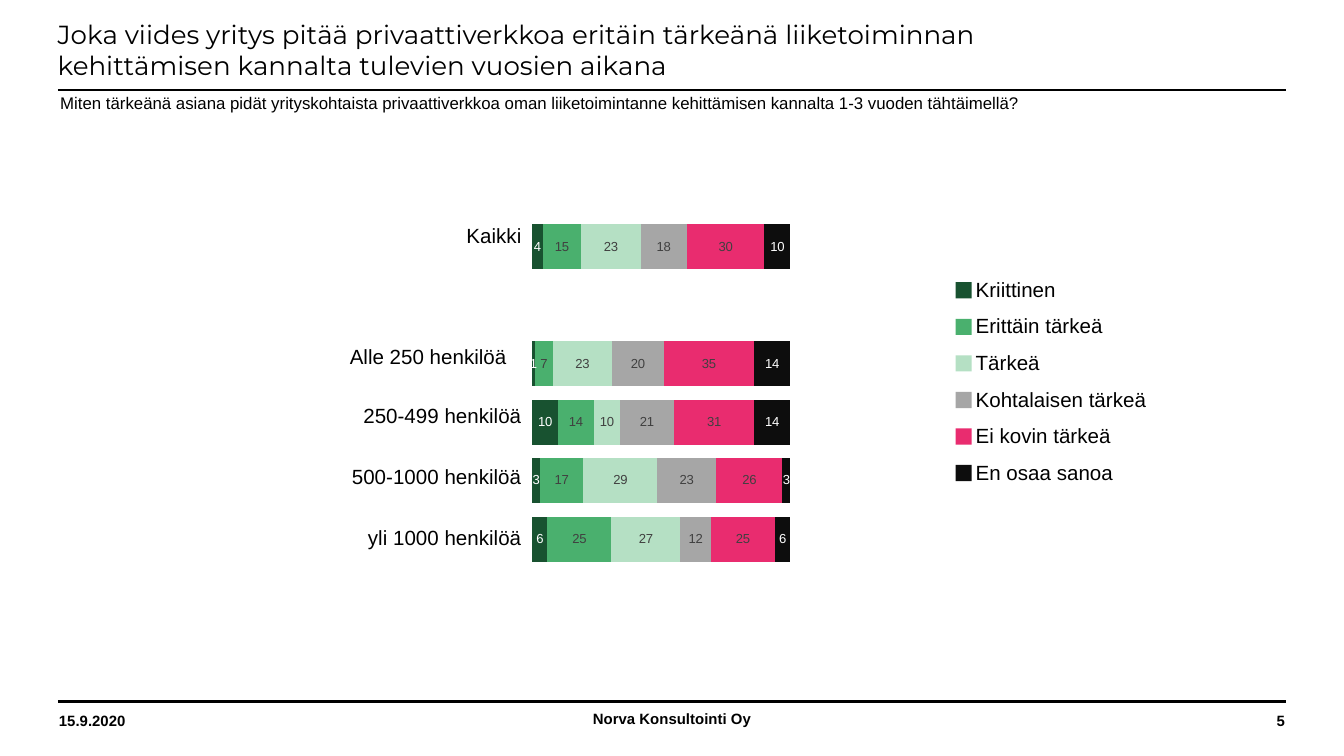
import pptx
import pptx.chart.data
import pptx.dml.color
import pptx.enum.chart
import pptx.enum.shapes
import pptx.enum.text
import pptx.oxml
import pptx.util
from pptx.util import Inches

# Content
TITLE = ("Joka viides yritys pitää privaattiverkkoa eritäin tärkeänä liiketoiminnan "
         "kehittämisen kannalta tulevien vuosien aikana")
QUESTION = ("Miten tärkeänä asiana pidät yrityskohtaista privaattiverkkoa oman "
            "liiketoimintanne kehittämisen kannalta 1-3 vuoden tähtäimellä?")
FOOTER = [  # text, left, top, width, alignment
    ("15.9.2020", 0.34, 5.21, 0.93, "LEFT"),
    ("Norva Konsultointi Oy", 3.31, 5.2, 3.38, "CENTER"),
    ("5", 9.03, 5.21, 0.63, "RIGHT"),
]
GROUPS = [  # name, label top, label right edge; the nameless group is a gap
    ("Kaikki", 1.66, 3.88),
    ("", None, None),
    ("Alle 250 henkilöä", 2.56, 3.77),
    ("250-499 henkilöä", 3.0, 3.88),
    ("500-1000 henkilöä", 3.45, 3.88),
    ("yli 1000 henkilöä", 3.91, 3.88),
]
ANSWERS = [  # name, fill, label colour, share per group
    ("Kriittinen", "dark green", "white", (4, None, 1, 10, 3, 6)),
    ("Erittäin tärkeä", "green", "grey text", (15, None, 7, 14, 17, 25)),
    ("Tärkeä", "light green", "grey text", (23, None, 23, 10, 29, 27)),
    ("Kohtalaisen tärkeä", "grey", "grey text", (18, None, 20, 21, 23, 12)),
    ("Ei kovin tärkeä", "pink", "grey text", (30, None, 35, 31, 26, 25)),
    ("En osaa sanoa", "near black", "white", (10, None, 14, 14, 3, 6)),
]
COLORS = {
    "black": "000000", "white": "FFFFFF", "grey text": "404040",
    "dark green": "185230", "green": "4AB06E", "light green": "B5E0C4",
    "grey": "A6A6A6", "pink": "E92C6F", "near black": "0D0D0D",
}

# Layout in inches
SLIDE_WIDTH = 10
SLIDE_HEIGHT = SLIDE_WIDTH * 9 / 16
RULE_LEFT, RULE_RIGHT, RULE_TOPS = 0.43, 9.57, (0.67, 5.22)
PLOT_LEFT, PLOT_TOP, PLOT_WIDTH, PLOT_HEIGHT = 3.96, 1.62, 1.92, 2.61
CHART_MARGIN = 0.1
LABEL_WIDTH, LABEL_HEIGHT = 1.3, 0.19
LEGEND_LEFT, LEGEND_TOP, LEGEND_BOTTOM = 7.11, 2.1, 3.46
LEGEND_PITCH = (LEGEND_BOTTOM - LEGEND_TOP) / (len(ANSWERS) - 1)
SWATCH = 0.12


def color(name):
    return pptx.dml.color.RGBColor.from_string(COLORS[name])


def add_text(slide, text, left, top, width, height, size=11, font="Arial", bold=False,
             align="LEFT", anchor="TOP", wrap=True, inset=True):
    box = slide.shapes.add_textbox(Inches(left), Inches(top), Inches(width), Inches(height))
    frame = box.text_frame
    frame.word_wrap = wrap
    frame.vertical_anchor = getattr(pptx.enum.text.MSO_ANCHOR, anchor)
    if not inset:
        frame.margin_left = frame.margin_right = frame.margin_top = frame.margin_bottom = 0
    paragraph = frame.paragraphs[0]
    paragraph.alignment = getattr(pptx.enum.text.PP_ALIGN, align)
    run = paragraph.add_run()
    run.text = text
    run.font.name, run.font.size, run.font.bold = font, pptx.util.Pt(size), bold
    run.font.color.rgb = color("black")


def add_rule(slide, top):
    rule = slide.shapes.add_connector(
        pptx.enum.shapes.MSO_CONNECTOR.STRAIGHT,
        Inches(RULE_LEFT), Inches(top), Inches(RULE_RIGHT), Inches(top))
    rule.line.color.rgb = color("black")
    rule.line.width = pptx.util.Pt(1.25)
    properties = rule._element.spPr
    properties.append(properties.makeelement(pptx.oxml.ns.qn("a:effectLst"), {}))


def place_plot(chart, width, height):
    """Fix the inner plot area inside the chart frame."""
    x, y = CHART_MARGIN / width, CHART_MARGIN / height
    layout = pptx.oxml.parse_xml(
        f'<c:layout {pptx.oxml.ns.nsdecls("c")}><c:manualLayout>'
        '<c:layoutTarget val="inner"/><c:xMode val="edge"/><c:yMode val="edge"/>'
        f'<c:x val="{x:.4f}"/><c:y val="{y:.4f}"/>'
        f'<c:w val="{1 - 2 * x:.4f}"/><c:h val="{1 - 2 * y:.4f}"/>'
        '</c:manualLayout></c:layout>')
    plot_area = chart._chartSpace.chart.plotArea
    for old_layout in plot_area.findall(pptx.oxml.ns.qn("c:layout")):
        plot_area.remove(old_layout)
    plot_area.insert(0, layout)


def add_answer_chart(slide):
    data = pptx.chart.data.CategoryChartData(number_format="0")
    data.categories = [name for name, _, _ in GROUPS]
    for name, _, _, shares in ANSWERS:
        data.add_series(name, shares)
    width, height = PLOT_WIDTH + 2 * CHART_MARGIN, PLOT_HEIGHT + 2 * CHART_MARGIN
    chart = slide.shapes.add_chart(
        pptx.enum.chart.XL_CHART_TYPE.BAR_STACKED_100,
        Inches(PLOT_LEFT - CHART_MARGIN), Inches(PLOT_TOP - CHART_MARGIN),
        Inches(width), Inches(height), data).chart
    chart.has_title = chart.has_legend = False
    chart.font.name, chart.font.size = "Arial", pptx.util.Pt(7)
    chart.category_axis.reverse_order = True
    chart.value_axis.has_major_gridlines = False
    chart.category_axis.visible = chart.value_axis.visible = False
    plot = chart.plots[0]
    plot.gap_width, plot.overlap, plot.vary_by_categories = 30, 100, False
    for series, (_, fill, label_color, _) in zip(plot.series, ANSWERS):
        series.format.fill.solid()
        series.format.fill.fore_color.rgb = color(fill)
        labels = series.data_labels
        labels.show_value = True
        labels.position = pptx.enum.chart.XL_LABEL_POSITION.CENTER
        labels.font.name, labels.font.size = "Arial", pptx.util.Pt(7)
        labels.font.color.rgb = color(label_color)
    place_plot(chart, width, height)


def add_legend(slide):
    for index, (name, fill, _, _) in enumerate(ANSWERS):
        top = LEGEND_TOP + index * LEGEND_PITCH
        swatch = slide.shapes.add_shape(
            pptx.enum.shapes.MSO_SHAPE.RECTANGLE,
            Inches(LEGEND_LEFT), Inches(top), Inches(SWATCH), Inches(SWATCH))
        swatch.shadow.inherit = False
        swatch.fill.solid()
        swatch.fill.fore_color.rgb = color(fill)
        swatch.line.fill.background()
        add_text(slide, name, LEGEND_LEFT + 0.15, top - 0.04, LABEL_WIDTH, LABEL_HEIGHT,
                 inset=False)


def main():
    presentation = pptx.Presentation()
    presentation.slide_width = Inches(SLIDE_WIDTH)
    presentation.slide_height = Inches(SLIDE_HEIGHT)
    slide = presentation.slides.add_slide(presentation.slide_layouts[6])

    # Heading and footer
    for top in RULE_TOPS:
        add_rule(slide, top)
    add_text(slide, TITLE, 0.33, 0.25, 8.21, 0.4, size=14, font="Montserrat", anchor="BOTTOM")
    add_text(slide, QUESTION, 0.35, 0.64, 7.4, 0.25, size=9, wrap=False)
    for text, left, top, width, align in FOOTER:
        add_text(slide, text, left, top, width, 0.3, size=8, bold=True,
                 align=align, anchor="MIDDLE")

    # Chart, group labels and legend
    add_answer_chart(slide)
    for name, top, right in GROUPS:
        if name:
            add_text(slide, name, right - LABEL_WIDTH, top, LABEL_WIDTH, LABEL_HEIGHT,
                     align="RIGHT", inset=False)
    add_legend(slide)
    presentation.save("out.pptx")


if __name__ == "__main__":
    main()
